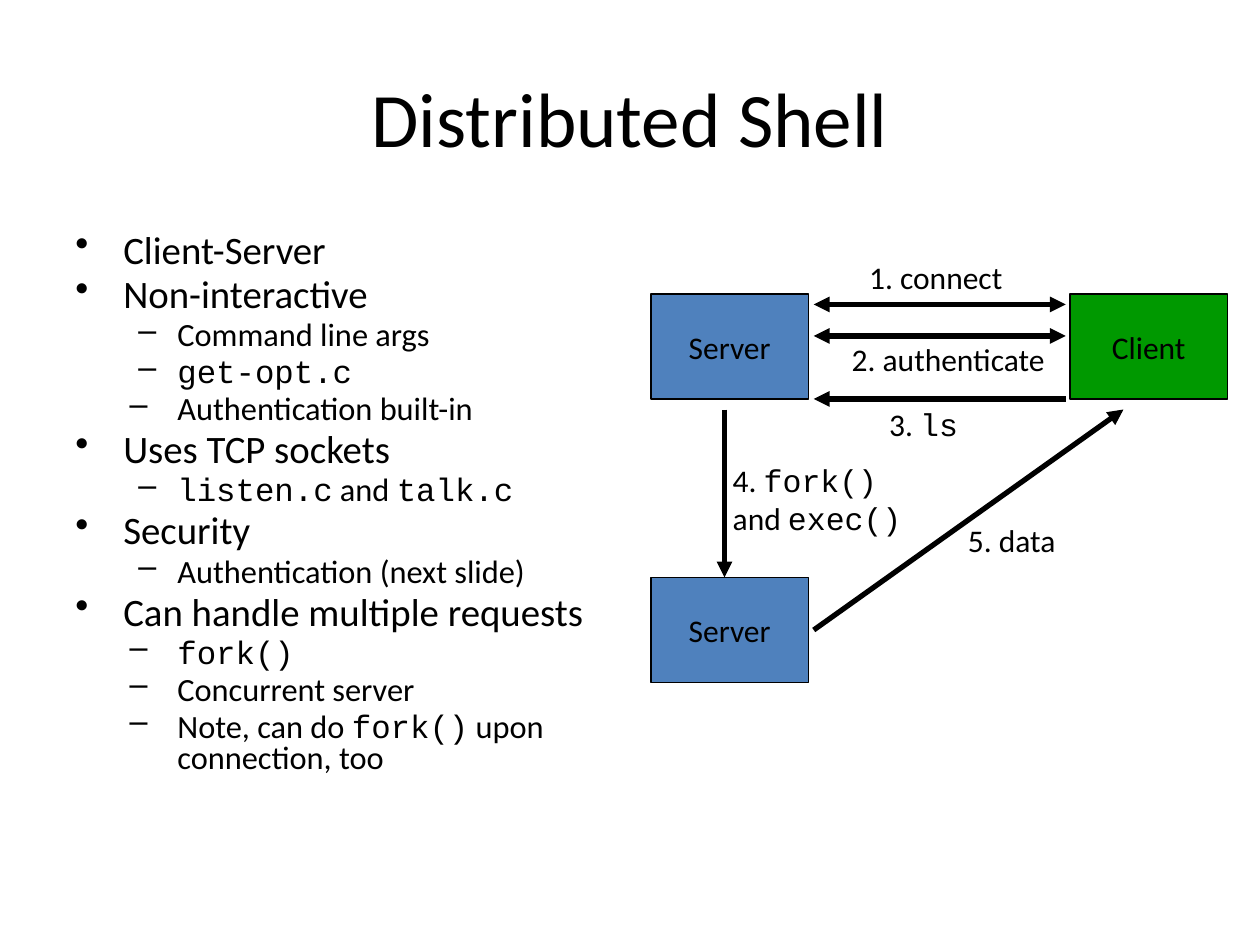
from dataclasses import dataclass
from lxml.etree import SubElement
from pptx import Presentation
from pptx.dml.color import RGBColor
from pptx.enum.shapes import MSO_CONNECTOR, MSO_SHAPE
from pptx.enum.text import MSO_ANCHOR, PP_ALIGN
from pptx.oxml.ns import qn
from pptx.slide import Slide
from pptx.util import Inches, Pt


def color(value):
    return RGBColor.from_string(value)


def grid(*cells):
    return [Inches(cell / 12) for cell in cells]


@dataclass
class Board:
    slide: Slide
    ink: str = "000000"
    font: str = "Calibri"
    code_font: str = "Courier New"
    label_size: float = 18

    def fill_line(self, paragraph, text, size, align=PP_ALIGN.LEFT):
        pieces = [(piece, i % 2) for i, piece in enumerate(text.split("`")) if piece]
        all_code = all(is_code for _, is_code in pieces)
        paragraph.alignment = align
        paragraph.font.size = Pt(size)
        paragraph.font.color.rgb = color(self.ink)
        paragraph.font.name = self.code_font if all_code else self.font
        for piece, is_code in pieces:
            run = paragraph.add_run()
            run.text = piece
            if is_code and not all_code:
                run.font.name = self.code_font

    def paragraphs(self, frame, count):
        return [frame.paragraphs[0]] + [frame.add_paragraph() for _ in range(count - 1)]

    def text(self, area, lines, size=None, align=PP_ALIGN.LEFT, wrap=False, anchor=MSO_ANCHOR.TOP):
        frame = self.slide.shapes.add_textbox(*grid(*area)).text_frame
        frame.word_wrap = wrap
        frame.vertical_anchor = anchor
        for paragraph, line in zip(self.paragraphs(frame, len(lines)), lines):
            self.fill_line(paragraph, line, size or self.label_size, align)

    def outline(self, area, items):
        box = self.slide.shapes.add_textbox(*grid(*area))
        box.fill.solid()
        box.fill.fore_color.rgb = color("FFFFFF")
        frame = box.text_frame
        frame.word_wrap = True
        for paragraph, (level, hang, text) in zip(self.paragraphs(frame, len(items)), items):
            size = (22.2, 18.5)[level]
            self.fill_line(paragraph, text, size)
            paragraph.level = level
            paragraph.line_spacing = 0.8
            paragraph.space_before = Pt(size * 0.18)
            properties = paragraph._p.get_or_add_pPr()
            properties.set("marL", str(Inches((0.38, 0.81)[level])))
            properties.set("indent", str(-Inches(hang)))
            bullet = properties.makeelement(qn("a:buChar"), {"char": "•–"[level]})
            properties.insert_element_before(bullet, "a:tabLst", "a:defRPr", "a:extLst")

    def node(self, left, top, name, fill):
        box = self.slide.shapes.add_shape(MSO_SHAPE.RECTANGLE, *grid(left, top, 15, 10))
        box.shadow.inherit = False
        box.fill.solid()
        box.fill.fore_color.rgb = color(fill)
        box.line.color.rgb = color(self.ink)
        box.line.width = Pt(1)
        frame = box.text_frame
        frame.word_wrap = False
        frame.vertical_anchor = MSO_ANCHOR.MIDDLE
        self.fill_line(frame.paragraphs[0], name, self.label_size, PP_ALIGN.CENTER)

    def arrow(self, start, end, both=False):
        link = self.slide.shapes.add_connector(MSO_CONNECTOR.STRAIGHT, *grid(*start, *end))
        link.line.color.rgb = color(self.ink)
        link.line.width = Pt(3)
        line = link.line._get_or_add_ln()
        for tag in ("a:headEnd", "a:tailEnd") if both else ("a:tailEnd",):
            SubElement(line, qn(tag), type="triangle")
        SubElement(link._element.spPr, qn("a:effectLst"))


def main():
    deck = Presentation()
    deck.slide_width, deck.slide_height = Inches(10), Inches(7.5)
    board = Board(deck.slides.add_slide(deck.slide_layouts[6]))

    board.text((6, 3.6, 108, 15), ["Distributed Shell"], 44, PP_ALIGN.CENTER, True, MSO_ANCHOR.MIDDLE)
    board.outline((6, 21.75, 56, 60.25), [
        (0, 0.38, "Client-Server"),
        (0, 0.38, "Non-interactive"),
        (1, 0.31, "Command line args"),
        (1, 0.31, "`get-opt.c`"),
        (1, 0.38, "Authentication built-in"),
        (0, 0.38, "Uses TCP sockets"),
        (1, 0.31, "`listen.c` and `talk.c`"),
        (0, 0.38, "Security"),
        (1, 0.31, "Authentication (next slide)"),
        (0, 0.38, "Can handle multiple requests"),
        (1, 0.38, "`fork()`"),
        (1, 0.38, "Concurrent server"),
        (1, 0.38, "Note, can do `fork()` upon connection, too"),
    ])

    server_left, client_left, top_row, bottom_row = 62, 101.9, 28, 55
    server_blue, client_green = "4F81BD", "009900"
    board.node(server_left, top_row, "Server", server_blue)
    board.node(client_left, top_row, "Client", client_green)
    board.node(server_left, bottom_row, "Server", server_blue)

    server_side, client_side = 77.5, 101.5
    for row, both in ((29, True), (32, True), (38, False)):
        board.arrow((client_side, row), (server_side, row), both)
    board.arrow((69, 39), (69, bottom_row))
    board.arrow((server_side, 60), (107, 39))

    board.text((81.5, 24, 15.25, 4.8), ["1. connect"], align=PP_ALIGN.CENTER)
    board.text((79.8, 31.8, 21, 4.8), ["2. authenticate"], align=PP_ALIGN.CENTER)
    board.text((83.5, 38, 9, 4.8), ["3. `ls`"])
    board.text((68.6, 43.3, 18.6, 8.5), ["4. `fork()`", "and `exec()`"])
    board.text((91, 49, 10.8, 4.8), ["5. data"])
    deck.save("out.pptx")


if __name__ == "__main__":
    main()
